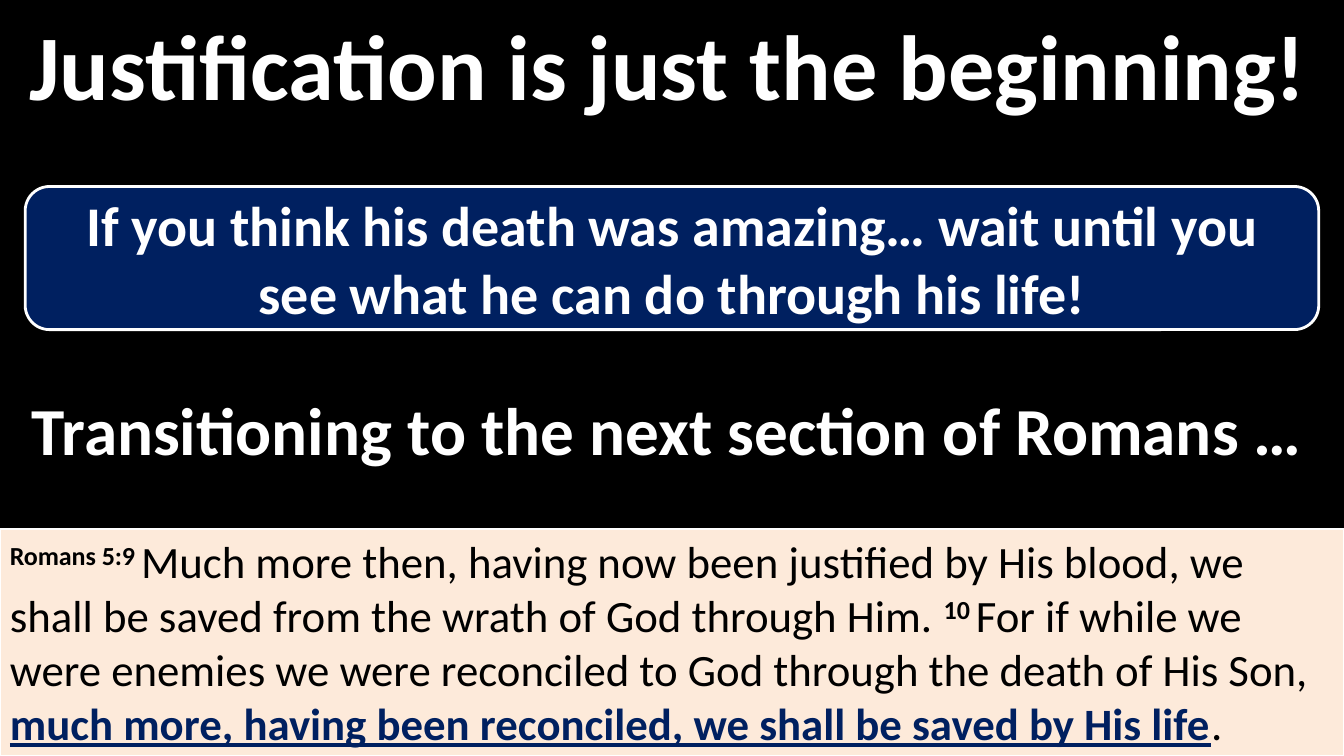
from pptx import Presentation
from pptx.dml.color import RGBColor
from pptx.enum.shapes import MSO_SHAPE
from pptx.enum.text import MSO_ANCHOR, PP_ALIGN
from pptx.util import Inches, Pt

WHITE, BLACK, NAVY, CREAM = "FFFFFF", "000000", "002060", "FDEADA"


def paint(color_format, color):
    """Give a solid fill, a line fill or a font colour the hex colour."""
    color_format.rgb = RGBColor.from_string(color)


def add_panel(kind, left, top, width, height, fill=None, line_width=None):
    """Add a shape without shadow; no fill or line unless one is given."""
    panel = slide.shapes.add_shape(
        kind, Inches(left), Inches(top), Inches(width), Inches(height))
    panel.shadow.inherit = False
    if fill:
        panel.fill.solid()
        paint(panel.fill.fore_color, fill)
        paint(panel.line.color, WHITE)
        panel.line.width = Pt(line_width)
    else:
        panel.fill.background()
        panel.line.fill.background()
    panel.text_frame.word_wrap = True
    return panel


prs = Presentation()
prs.slide_width, prs.slide_height = Inches(13.33), Inches(7.5)
slide = prs.slides.add_slide(prs.slide_layouts[6])
slide.background.fill.solid()
paint(slide.background.fill.fore_color, BLACK)

# Scripture passage: text, colour, bold, superscript, underline
passage = add_panel(MSO_SHAPE.RECTANGLE, 0, 5.25, 13.33, 2.25, CREAM, 1.5)
passage.text_frame.vertical_anchor = MSO_ANCHOR.TOP
verses = passage.text_frame.paragraphs[0]
verses.alignment = PP_ALIGN.LEFT
verses.font.size = Pt(32)
verses.font.name = "Calibri"
for words, color, bold, superscript, underline in [
    ("Romans 5:9 ", BLACK, True, True, False),
    ("Much more then, having now been justified by His blood, we shall be "
     "saved from the wrath of God through Him. ", BLACK, False, False, False),
    ("10 ", BLACK, True, True, False),
    ("For if while we were enemies we were reconciled to God through the "
     "death of His Son, ", BLACK, False, False, False),
    ("much more, having been reconciled, we shall be saved by His life",
     NAVY, True, False, True),
    (".", BLACK, False, False, False),
]:
    run = verses.add_run()
    run.text = words
    run.font.bold = bold
    run.font.underline = underline
    paint(run.font.color, color)
    if superscript:
        run._r.get_or_add_rPr().set("baseline", "30000")

# Callouts, with the pointer tucked inside the body
callout = MSO_SHAPE.ROUNDED_RECTANGULAR_CALLOUT
transition = add_panel(callout, 0.07, 3.71, 13.1, 1.08)
promise = add_panel(callout, 0.25, 1.85, 12.83, 1.42, NAVY, 2)
for bubble in (transition, promise):
    for index, value in enumerate((-0.22, 0.5, 0.17)):
        bubble.adjustments[index] = value

title = slide.shapes.add_textbox(
    Inches(0.01), Inches(0.18), Inches(13.24), Inches(0.9))
title.text_frame.word_wrap = True

for holder, words, size in [
    (transition, "Transitioning to the next section of Romans …", 48),
    (promise, "If you think his death was amazing… wait until you see what "
              "he can do through his life!", 40),
    (title, "Justification is just the beginning!", 66),
]:
    holder.text_frame.vertical_anchor = MSO_ANCHOR.MIDDLE
    statement = holder.text_frame.paragraphs[0]
    statement.text = words
    statement.alignment = PP_ALIGN.CENTER
    statement.font.name = "Calibri"
    statement.font.size = Pt(size)
    statement.font.bold = True
    paint(statement.font.color, WHITE)

prs.save("out.pptx")
